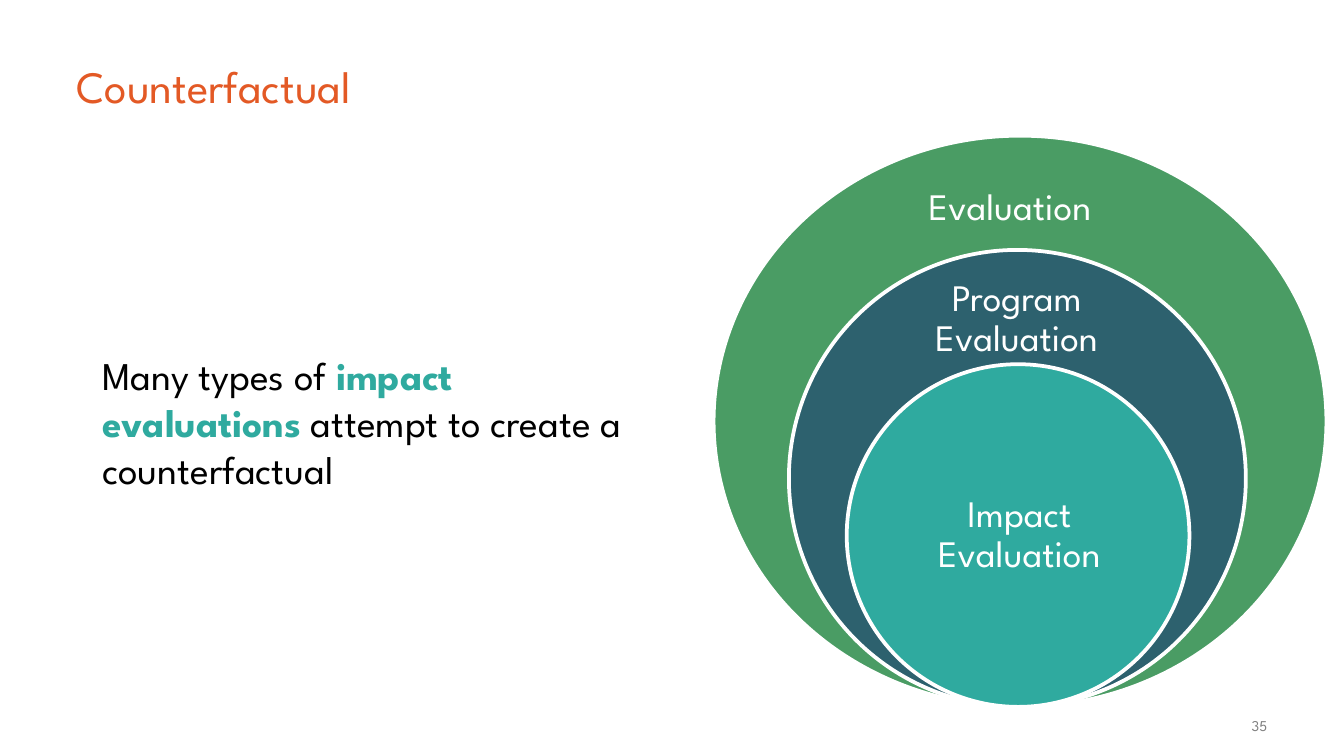
"""Build the counterfactual slide with its nested evaluation circles."""
from pptx import Presentation
from pptx.dml.color import RGBColor
from pptx.enum.shapes import MSO_SHAPE as Shape
from pptx.enum.text import MSO_ANCHOR as Anchor, PP_ALIGN as Align
from pptx.util import Inches, Pt

FONT = "League Spartan"
ORANGE = RGBColor(0xE3, 0x59, 0x25)
GREEN = RGBColor(0x4A, 0x9C, 0x64)
NAVY = RGBColor(0x2D, 0x61, 0x6E)
TEAL = RGBColor(0x2F, 0xAA, 0x9F)
GRAY = RGBColor(0x7F, 0x7F, 0x7F)
BLACK = RGBColor(0, 0, 0)
WHITE = RGBColor(255, 255, 255)

WIDTH = 10
HEIGHT = WIDTH * 9 / 16
TITLE = "Counterfactual"
BODY = [
    ("Many types of ", BLACK, False),
    ("impact evaluations", TEAL, True),
    (" attempt to create a counterfactual", BLACK, False),
]
NUMBER = "35"
BASE = 5.26
RINGS = [
    ("Evaluation", GREEN, (5.31, 4.56, 4.25), (6.41, 1.23, 2.21, 0.64)),
    ("Program Evaluation", NAVY, (5.87, 3.4, 3.4), (6.56, 2.07, 2.01, 0.61)),
    ("Impact Evaluation", TEAL, (6.3, 2.55, 2.55), (6.61, 3.7, 1.95, 0.57)),
]


def write(shape, runs, size, align=Align.LEFT, anchor=Anchor.MIDDLE, pad=(0.07, 0.04)):
    frame = shape.text_frame
    frame.word_wrap = True
    frame.vertical_anchor = anchor
    frame.margin_left = frame.margin_right = Inches(pad[0])
    frame.margin_top = frame.margin_bottom = Inches(pad[1])
    para = frame.paragraphs[0]
    para.alignment = align
    for text, color, bold in runs:
        run = para.add_run()
        run.text = text
        run.font.name = FONT
        run.font.size = Pt(size)
        run.font.bold = bold
        run.font.color.rgb = color
    return para


def add_box(slide, *area):
    return slide.shapes.add_textbox(*map(Inches, area))


def add_ring(slide, name, color, oval, area):
    left, width, height = oval
    ring = slide.shapes.add_shape(
        Shape.OVAL, *map(Inches, (left, BASE - height, width, height)))
    ring.shadow.inherit = False
    ring.fill.solid()
    ring.fill.fore_color.rgb = color
    ring.line.color.rgb = WHITE
    ring.line.width = Pt(2)
    label = add_box(slide, *area)
    para = write(label, [(name, WHITE, False)], 20, Align.CENTER, pad=(0.16, 0.16))
    para.line_spacing = 0.9


def main():
    deck = Presentation()
    deck.slide_width, deck.slide_height = Inches(WIDTH), Inches(HEIGHT)
    slide = deck.slides.add_slide(deck.slide_layouts[5])

    title = slide.shapes.title
    title.left, title.top, title.width, title.height = map(Inches, (0.5, 0.17, 9, 0.94))
    write(title, [(TITLE, ORANGE, False)], 24)

    body = add_box(slide, 0.5, 1.21, 4.5, 3.86)
    para = write(body, BODY, 21)
    body.text_frame.margin_right = Inches(0.15)
    para.space_before = Pt(3)
    para._p.get_or_add_pPr().set("marL", str(Inches(0.19)))

    page = add_box(slide, 8.57, 5.29, 0.93, 0.18)
    write(page, [(NUMBER, GRAY, False)], 8, Align.RIGHT, Anchor.TOP)

    for ring in RINGS:
        add_ring(slide, *ring)
    deck.save("out.pptx")


if __name__ == "__main__":
    main()
